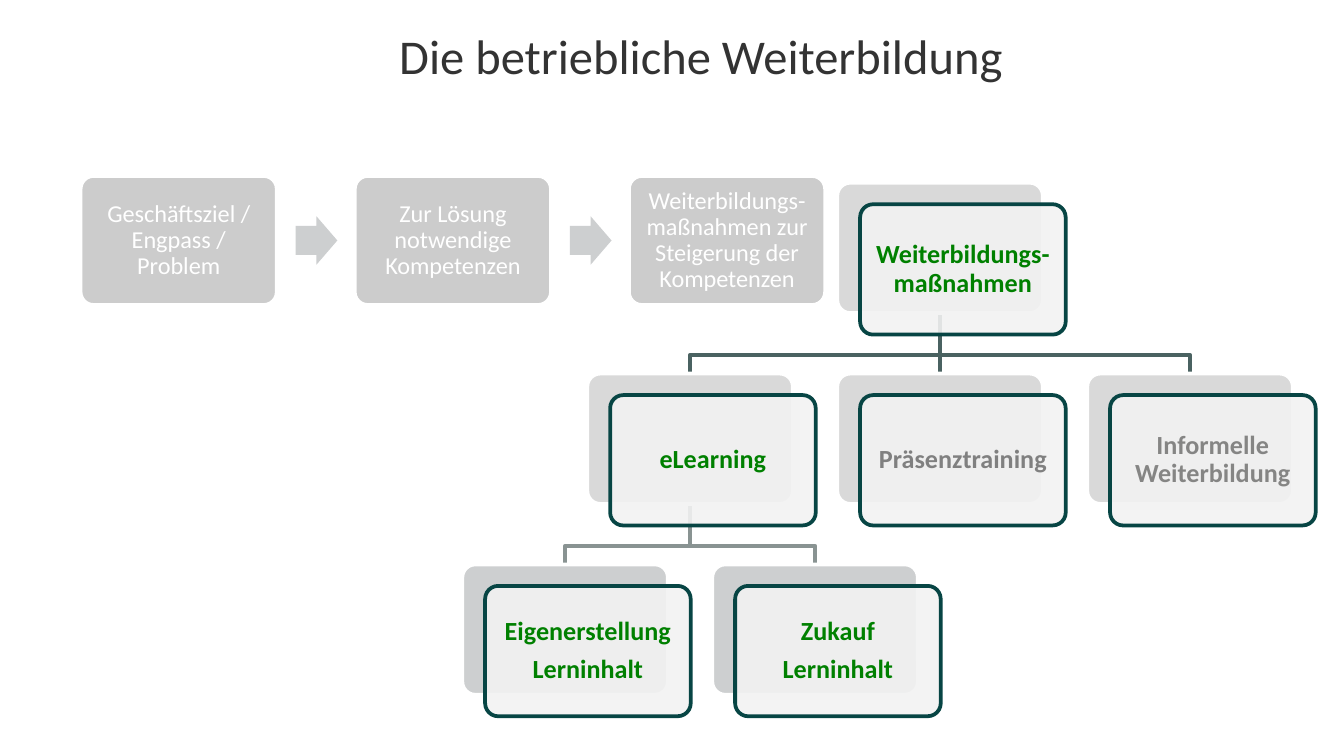
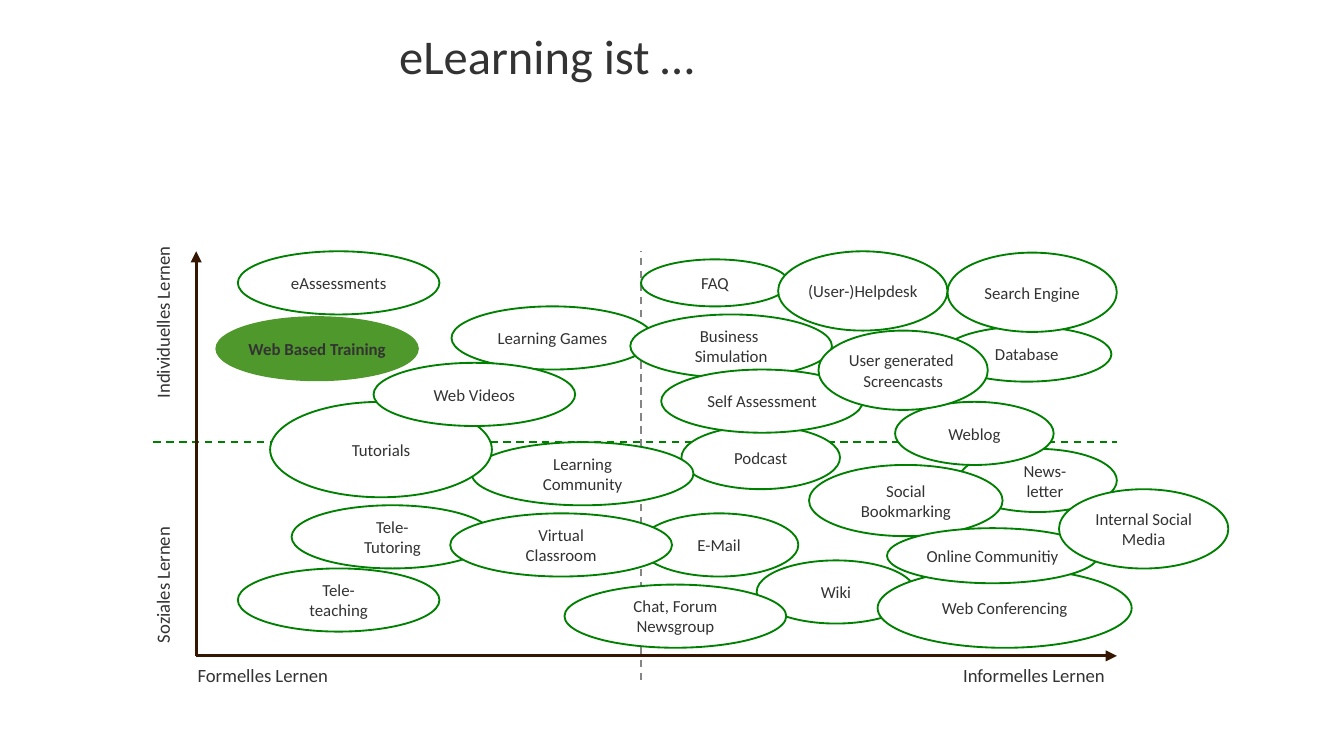
import lxml.etree
import pptx
import pptx.dml.color
import pptx.enum.dml
import pptx.enum.shapes
import pptx.enum.text
import pptx.oxml.ns
import pptx.util

Inches = pptx.util.Inches
Pt = pptx.util.Pt
RGBColor = pptx.dml.color.RGBColor
SHAPE = pptx.enum.shapes.MSO_SHAPE
ALIGN = pptx.enum.text.PP_ALIGN
ANCHOR = pptx.enum.text.MSO_ANCHOR
DASH = pptx.enum.dml.MSO_LINE.DASH
qn = pptx.oxml.ns.qn

FONT = "Calibri"
WHITE = RGBColor(0xFF, 0xFF, 0xFF)
INK = RGBColor(0x33, 0x33, 0x33)
GREEN = RGBColor(0x00, 0x80, 0x00)
LEAF = RGBColor(0x4F, 0x98, 0x2B)
GREY = RGBColor(0x80, 0x80, 0x80)
DASH_GREY = RGBColor(0x85, 0x85, 0x84)
STEP_GREY = RGBColor(0xCC, 0xCC, 0xCC)
ARROW_GREY = RGBColor(0xCD, 0xCF, 0xD0)
CARD_GREY = RGBColor(0xD9, 0xD9, 0xD9)
CARD_FILL = RGBColor(0xF2, 0xF2, 0xF2)
PETROL = RGBColor(0x07, 0x45, 0x44)
BROWN = RGBColor(0x36, 0x16, 0x00)

PAGE_WIDTH = Inches(10)
PAGE_HEIGHT = PAGE_WIDTH * 9 // 16
TEXT_INSETS = (0.09, 0.04, 0.09, 0.04)

STEPS = [
    "Geschäftsziel / Engpass / Problem",
    "Zur Lösung notwendige Kompetenzen",
    "Weiterbildungs- maßnahmen zur Steigerung der Kompetenzen",
]
STEP_LEFT, STEP_TOP, STEP_PITCH = 0.6, 1.31, 2.04
STEP_SIZE = (1.46, 0.96)

TREE = {
    "root": (None, 0, 0, "Weiterbildungs- maßnahmen", GREEN),
    "online": ("root", 1, -2, "eLearning", GREEN),
    "make": ("online", 2, -3, "Eigenerstellung\nLerninhalt", GREEN),
    "buy": ("online", 2, -1, "Zukauf\nLerninhalt", GREEN),
    "class": ("root", 1, 0, "Präsenztraining", GREY),
    "informal": ("root", 1, 2, "Informelle Weiterbildung", DASH_GREY),
}
BACK_FILLS = [CARD_GREY, CARD_GREY, ARROW_GREY]
BRANCH_COLORS = [None, RGBColor(0x4A, 0x62, 0x61), RGBColor(0x89, 0x93, 0x92)]
ROOT_LEFT, ROOT_TOP = 6.23, 1.36
COLUMN_PITCH, LEVEL_PITCH = 0.93, 1.42
CARD_SIZE = (1.53, 0.97)
CARD_SHIFT = (0.17, 0.16)
TRUNK = 0.31

SMALL = (1.18, 0.47)
MEDIUM = (1.5, 0.47)
WIDE = (1.65, 0.47)
ROUND = (1.26, 0.59)
HIGHLIGHT = "Web Based Training"
NEWSLETTER = "News-\vletter"
TOOLS = [
    (7.13, 3.34, SMALL, NEWSLETTER),
    (7.01, 2.43, (1.26, 0.41), "Database"),
    (7.05, 1.88, ROUND, "Search Engine"),
    (6.66, 2.99, SMALL, "Weblog"),
    (5.07, 3.17, SMALL, "Podcast"),
    (5.63, 4.17, SMALL, "Wiki"),
    (6.02, 3.46, (1.44, 0.53), "Social\vBookmarking"),
    (6.53, 4.23, (1.89, 0.59), "Web Conferencing"),
    (4.76, 3.82, SMALL, "E-Mail"),
    (1.77, 4.23, MEDIUM, "Tele-\vteaching"),
    (3.51, 3.29, WIDE, "Learning\vCommunity"),
    (4.77, 1.93, (1.1, 0.35), "FAQ"),
    (1.61, 2.36, MEDIUM, HIGHLIGHT),
    (2.01, 2.99, (1.65, 0.71), "Tutorials"),
    (1.77, 1.87, MEDIUM, "eAssessments"),
    (3.36, 2.28, MEDIUM, "Learning Games"),
    (4.2, 4.35, WIDE, "Chat, Forum\vNewsgroup"),
    (5.79, 1.87, ROUND, "(User-)Helpdesk"),
    (6.6, 3.93, (1.57, 0.41), "Online Communitiy"),
    (4.69, 2.34, MEDIUM, "Business \nSimulation"),
    (2.17, 3.76, MEDIUM, "Tele-\vTutoring"),
    (4.92, 2.75, MEDIUM, "Self Assessment"),
    (2.78, 2.7, MEDIUM, "Web Videos"),
    (3.35, 3.82, WIDE, "Virtual\vClassroom"),
    (7.88, 3.64, ROUND, "Internal Social\nMedia"),
    (6.09, 2.46, ROUND, "User generated \nScreencasts"),
]
ORIGIN = (1.46, 4.88)
AXIS_ENDS = [(1.46, 1.87), (8.31, 4.88)]
DIVIDERS = [
    ((4.77, 5.06), (4.77, 1.87), DASH_GREY),
    ((1.14, 3.29), (8.31, 3.29), GREEN),
]
AXIS_LABELS = [
    ("Formelles Lernen", 1.38, 4.9, 2.91, 0, ALIGN.LEFT),
    ("Informelles Lernen", 5.4, 4.9, 2.91, 0, ALIGN.RIGHT),
    ("Soziales Lernen", 0.5, 4.04, 1.42, 270, ALIGN.LEFT),
    ("Individuelles Lernen", 0.12, 2.71, 2.18, 270, ALIGN.RIGHT),
]


def write(shape, text, size, color, bold=False, align=ALIGN.CENTER,
          anchor=ANCHOR.MIDDLE, insets=TEXT_INSETS, wrap=True, spacing=None, after=0):
    frame = shape.text_frame
    frame.text = text
    frame.word_wrap = wrap
    frame.auto_size = pptx.enum.text.MSO_AUTO_SIZE.NONE
    frame.vertical_anchor = anchor
    frame.margin_left, frame.margin_top, frame.margin_right, frame.margin_bottom = map(Inches, insets)
    for para in frame.paragraphs:
        para.alignment = align
        para.line_spacing = spacing
        para.space_after = Pt(after)
        for span in para.runs:
            span.font.name = FONT
            span.font.size = Pt(size)
            span.font.bold = bold
            span.font.color.rgb = color


def add_page(deck, title):
    page = deck.slides.add_slide(deck.slide_layouts[5])
    heading = page.shapes.title
    heading.left, heading.top = Inches(2.88), Inches(0.15)
    heading.width, heading.height = Inches(6.92), Inches(0.71)
    write(heading, title, 26, INK, align=ALIGN.LEFT, anchor=ANCHOR.TOP)
    return page


def add_block(page, kind, left, top, size, fill, line=None, weight=2, adjust=()):
    block = page.shapes.add_shape(kind, *map(Inches, (left, top, *size)))
    block.shadow.inherit = False
    block.fill.solid()
    block.fill.fore_color.rgb = fill
    if line is None:
        block.line.fill.background()
    else:
        block.line.color.rgb = line
        block.line.width = Pt(weight)
    for index, value in enumerate(adjust):
        block.adjustments[index] = value
    return block


def add_line(page, start, end, color, weight, dash=None, arrow=False):
    line = page.shapes.add_connector(
        pptx.enum.shapes.MSO_CONNECTOR.STRAIGHT, *map(Inches, (*start, *end)))
    line.line.color.rgb = color
    line.line.width = Pt(weight)
    if dash is not None:
        line.line.dash_style = dash
    properties = line.element.spPr
    if arrow:
        lxml.etree.SubElement(properties.find(qn("a:ln")), qn("a:tailEnd"), type="triangle")
    lxml.etree.SubElement(properties, qn("a:effectLst"))


def card_place(key):
    parent, level, column, text, color = TREE[key]
    return ROOT_LEFT + column * COLUMN_PITCH, ROOT_TOP + level * LEVEL_PITCH


def add_branch(page, parent, child, color):
    width, height = CARD_SIZE
    parent_left, parent_top = card_place(parent)
    child_left, child_top = card_place(child)
    start_x, end_x = parent_left + width / 2, child_left + width / 2
    start_y = parent_top + height
    points = [(start_x, start_y + TRUNK), (end_x, start_y + TRUNK), (end_x, child_top)]
    if start_x == end_x:
        points = points[-1:]
    builder = page.shapes.build_freeform(Inches(start_x), Inches(start_y))
    builder.add_line_segments([(Inches(x), Inches(y)) for x, y in points], close=False)
    branch = builder.convert_to_shape()
    branch.shadow.inherit = False
    branch.fill.background()
    branch.line.color.rgb = color
    branch.line.width = Pt(2)


def add_card(page, key):
    parent, level, column, text, color = TREE[key]
    left, top = card_place(key)
    add_block(page, SHAPE.ROUNDED_RECTANGLE, left, top, CARD_SIZE,
              BACK_FILLS[level], WHITE, adjust=[0.1])
    card = add_block(page, SHAPE.ROUNDED_RECTANGLE, left + CARD_SHIFT[0], top + CARD_SHIFT[1],
                     CARD_SIZE, CARD_FILL, PETROL, adjust=[0.1])
    tint = card.element.spPr.find(qn("a:solidFill")).find(qn("a:srgbClr"))
    lxml.etree.SubElement(tint, qn("a:alpha"), val="90000")
    write(card, text, 14, color, bold=True, insets=[0.03] * 4, spacing=0.9, after=4.9)


def build_training_page(deck):
    page = add_page(deck, "Die betriebliche Weiterbildung")
    for index, text in enumerate(STEPS):
        left = STEP_LEFT + index * STEP_PITCH
        step = add_block(page, SHAPE.ROUNDED_RECTANGLE, left, STEP_TOP, STEP_SIZE,
                         STEP_GREY, WHITE, adjust=[0.1])
        write(step, text, 13, WHITE, insets=[0.03] * 4, spacing=0.9, after=4.55)
        if index < len(STEPS) - 1:
            add_block(page, SHAPE.RIGHT_ARROW, left + 1.6, STEP_TOP + 0.3, (0.31, 0.36),
                      ARROW_GREY, adjust=[0.6, 0.5])
    for key, (parent, level, *rest) in TREE.items():
        if parent:
            add_branch(page, parent, key, BRANCH_COLORS[level])
    for key in TREE:
        add_card(page, key)


def build_elearning_page(deck):
    page = add_page(deck, "eLearning ist …")
    for start, end, color in DIVIDERS:
        add_line(page, start, end, color, 1, dash=DASH)
    for end in AXIS_ENDS:
        add_line(page, ORIGIN, end, BROWN, 1.5, arrow=True)
    for text, left, top, width, rotation, align in AXIS_LABELS:
        label = page.shapes.add_textbox(*map(Inches, (left, top, width, 0.25)))
        label.rotation = rotation
        write(label, text, 10, INK, align=align, anchor=ANCHOR.TOP)
    for left, top, size, text in TOOLS:
        special = text == HIGHLIGHT
        fill, line = (LEAF, LEAF) if special else (WHITE, GREEN)
        bubble = add_block(page, SHAPE.OVAL, left, top, size, fill, line, weight=1)
        insets = (0.2, 0.04, 0.09, 0.04) if text == NEWSLETTER else TEXT_INSETS
        write(bubble, text, 9, INK, bold=special, insets=insets, wrap=False)


def main():
    deck = pptx.Presentation()
    deck.slide_width, deck.slide_height = PAGE_WIDTH, PAGE_HEIGHT
    build_training_page(deck)
    build_elearning_page(deck)
    deck.save("out.pptx")


if __name__ == "__main__":
    main()
